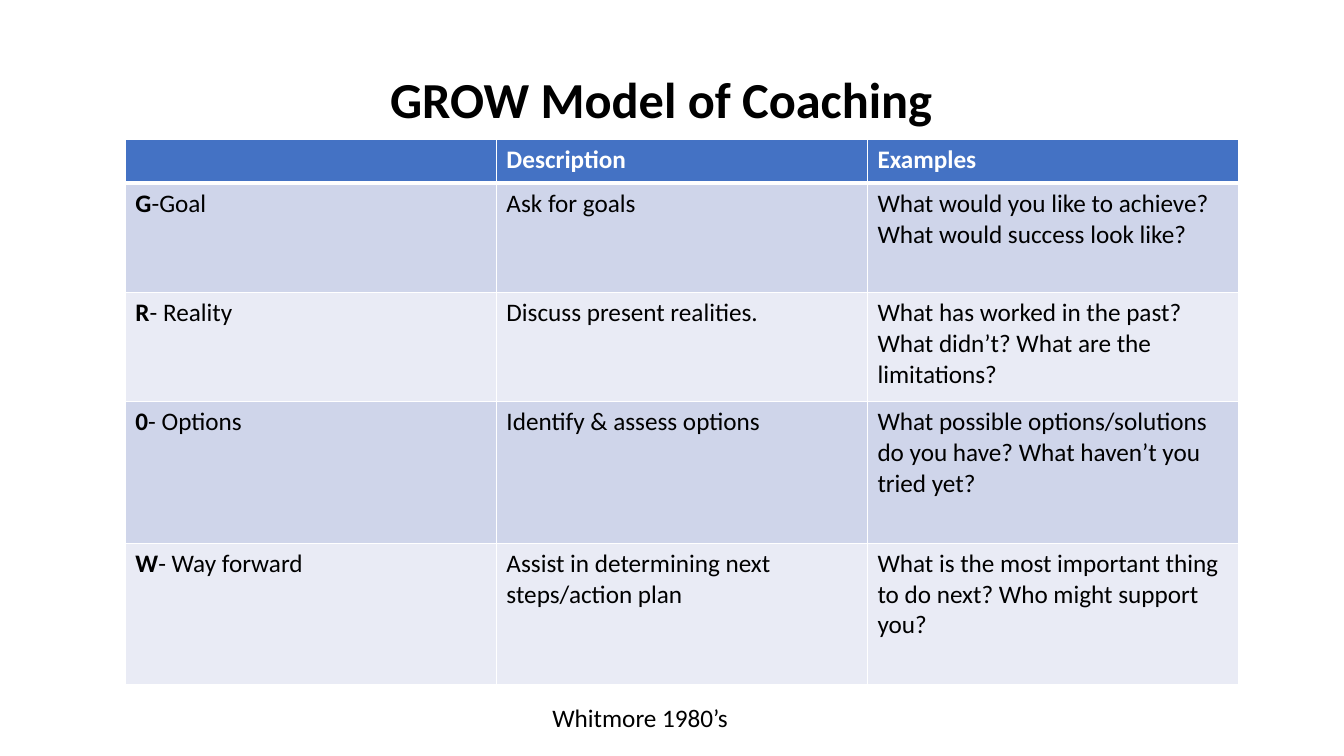
from typing import NamedTuple

from lxml import etree
from pptx import Presentation
from pptx.dml import color
from pptx.enum import text
from pptx.oxml import ns
from pptx import util as u

FONT = "Calibri"
BLACK, WHITE, BLUE = "000000", "FFFFFF", "4472C4"
BANDS = ("CFD5EA", "E9EBF5")
COLUMN_WIDTH = 9.35
HEADER_HEIGHT = 1.11


class Step(NamedTuple):
    letter: str
    name: str
    description: str
    examples: str
    height: float


class Label(NamedTuple):
    words: str
    left: float
    top: float
    width: float
    height: float
    size: int
    is_title: bool


HEADINGS = ("", "Description", "Examples")
STEPS = (
    Step("G", "-Goal", "Ask for goals",
         "What would you like to achieve? What would success look like?", 2.75),
    Step("R", "- Reality", "Discuss present realities.",
         "What has worked in the past? What didn’t? What are the limitations?", 2.75),
    Step("0", "- Options", "Identify & assess options",
         "What possible options/solutions do you have? What haven’t you tried yet?", 3.57),
    Step("W", "- Way forward", "Assist in determining next steps/action plan",
         "What is the most important thing to do next? Who might support you?", 3.57),
)
LABELS = (
    Label("GROW Model of Coaching", 2.06, 0.74, 29.21, 3.68, 36, True),
    Label("Whitmore 1980’s", 13.67, 17.58, 4.98, 1.02, 18, False),
)


def rgb(value: str) -> color.RGBColor:
    return color.RGBColor.from_string(value)


def format_span(span, size: int, ink: str, bold: bool) -> None:
    span.font.name = FONT
    span.font.size = u.Pt(size)
    span.font.bold = bold
    span.font.color.rgb = rgb(ink)


def add_label(page, label: Label) -> None:
    box = page.shapes.add_textbox(
        u.Cm(label.left), u.Cm(label.top), u.Cm(label.width), u.Cm(label.height))
    frame = box.text_frame
    frame.text = label.words
    frame.word_wrap = label.is_title
    para = frame.paragraphs[0]
    if label.is_title:
        frame.vertical_anchor = text.MSO_ANCHOR.MIDDLE
        para.alignment = text.PP_ALIGN.CENTER
        para.line_spacing = 0.9
    format_span(para.runs[0], label.size, BLACK, label.is_title)


def style_cell(cell, fill: str, top: int = 1, bottom: int = 1) -> None:
    """Draw white borders, widths in points, and then the fill that must follow them."""
    properties = cell._tc.get_or_add_tcPr()
    for side, width in (("L", 1), ("R", 1), ("T", top), ("B", bottom)):
        line = etree.SubElement(properties, ns.qn(f"a:ln{side}"), w=str(u.Pt(width)))
        solid = etree.SubElement(line, ns.qn("a:solidFill"))
        etree.SubElement(solid, ns.qn("a:srgbClr"), val=WHITE)
    cell.fill.solid()
    cell.fill.fore_color.rgb = rgb(fill)


def write_cell(cell, words: str, ink: str, bold: bool) -> None:
    cell.text_frame.text = words
    for span in cell.text_frame.paragraphs[0].runs:
        format_span(span, 18, ink, bold)


def add_grow_table(page) -> None:
    heights = [HEADER_HEIGHT] + [step.height for step in STEPS]
    table = page.shapes.add_table(
        len(heights), len(HEADINGS), u.Cm(3.16), u.Cm(3.51),
        u.Cm(COLUMN_WIDTH * len(HEADINGS)), u.Cm(sum(heights))).table
    for column in table.columns:
        column.width = u.Cm(COLUMN_WIDTH)
    for row, height in zip(table.rows, heights):
        row.height = u.Cm(height)

    for column, heading in enumerate(HEADINGS):
        cell = table.cell(0, column)
        write_cell(cell, heading, WHITE, True)
        style_cell(cell, BLUE, bottom=3)

    for row, step in enumerate(STEPS, start=1):
        for column, words in enumerate((step.letter, step.description, step.examples)):
            cell = table.cell(row, column)
            write_cell(cell, words, BLACK, column == 0)
            style_cell(cell, BANDS[(row - 1) % 2], top=3 if row == 1 else 1)
        name = table.cell(row, 0).text_frame.paragraphs[0].add_run()
        name.text = step.name
        format_span(name, 18, BLACK, False)


def main() -> None:
    deck = Presentation()
    deck.slide_width, deck.slide_height = u.Cm(33.87), u.Cm(19.05)
    page = deck.slides.add_slide(deck.slide_layouts[6])
    add_grow_table(page)
    for label in LABELS:
        add_label(page, label)
    deck.save("out.pptx")


if __name__ == "__main__":
    main()
